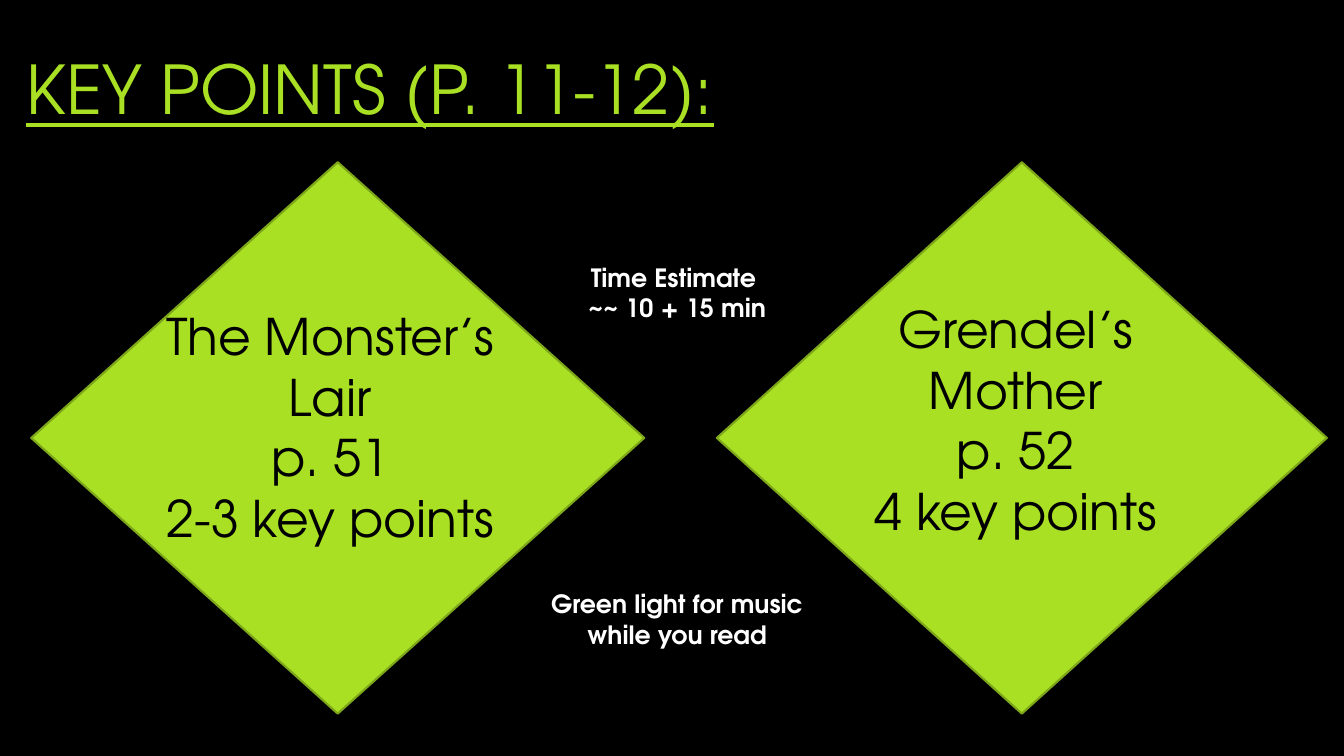
from pptx import Presentation
from pptx.dml.color import RGBColor
from pptx.enum.shapes import MSO_SHAPE
from pptx.enum.text import MSO_ANCHOR, PP_ALIGN
from pptx.util import Inches, Pt

DIAMOND = MSO_SHAPE.DIAMOND
TOP, BOTTOM = MSO_ANCHOR.TOP, MSO_ANCHOR.BOTTOM
CENTER = PP_ALIGN.CENTER

FONT = "TeX Gyre Adventor"
BLACK, WHITE, LIME, OLIVE = "000000", "FFFFFF", "A9E023", "7DA61A"
WIDTH, HEIGHT = 13.33, 7.5

TITLE = "KEY POINTS (P. 11-12):"
READINGS = [
    {"lines": ["The Monster’s Lair", "p. 51", "2-3 key points"],
     "left": 0.31, "width": 6.08, "text_top": 2.98},
    {"lines": ["Grendel’s Mother", "p. 52", "4 key points"],
     "left": 7.11, "width": 6.05, "text_top": 2.91},
]
NOTES = [
    (["Time Estimate ", "~~ 10 + 15 min"], 2.55),
    (["Green light for music while you read"], 5.79),
]
DIAMOND_TOP, DIAMOND_HEIGHT = 1.61, 5.47
TEXT_INDENT, TEXT_WIDTH, TEXT_HEIGHT = 0.94, 4.05, 2.52
NOTE_WIDTH, NOTE_HEIGHT = 3.25, 0.71
NOTE_LEFT = (WIDTH - NOTE_WIDTH) / 2 + 0.05


def color(value):
    return RGBColor.from_string(value)


def place(*lengths):
    return [Inches(length) for length in lengths]


def add_text(page, lines, area, size, ink, anchor=TOP, bold=False, underline=False):
    box = page.shapes.add_textbox(*place(*area))
    frame = box.text_frame
    frame.word_wrap = True
    frame.vertical_anchor = anchor
    frame.text = "\n".join(lines)
    for para in frame.paragraphs:
        para.alignment = CENTER
        for span in para.runs:
            span.font.name = FONT
            span.font.size = Pt(size)
            span.font.bold = bold
            span.font.underline = underline
            span.font.color.rgb = color(ink)


def add_diamond(page, left, width):
    diamond = page.shapes.add_shape(
        DIAMOND, *place(left, DIAMOND_TOP, width, DIAMOND_HEIGHT))
    diamond.shadow.inherit = False
    diamond.fill.solid()
    diamond.fill.fore_color.rgb = color(LIME)
    diamond.line.color.rgb = color(OLIVE)
    diamond.line.width = Pt(1.5)


def main():
    """Build the key points slide with two readings and two notes."""
    deck = Presentation()
    deck.slide_width, deck.slide_height = place(WIDTH, HEIGHT)
    page = deck.slides.add_slide(deck.slide_layouts[6])
    page.background.fill.solid()
    page.background.fill.fore_color.rgb = color(BLACK)

    add_text(page, [TITLE], (0.07, 0.32, 7.2, 1), 48, LIME, BOTTOM, underline=True)
    for reading in READINGS:
        add_diamond(page, reading["left"], reading["width"])
        area = (reading["left"] + TEXT_INDENT, reading["text_top"], TEXT_WIDTH, TEXT_HEIGHT)
        add_text(page, reading["lines"], area, 36, BLACK)
    for lines, top in NOTES:
        add_text(page, lines, (NOTE_LEFT, top, NOTE_WIDTH, NOTE_HEIGHT), 18, WHITE, bold=True)

    deck.save("out.pptx")


if __name__ == "__main__":
    main()
